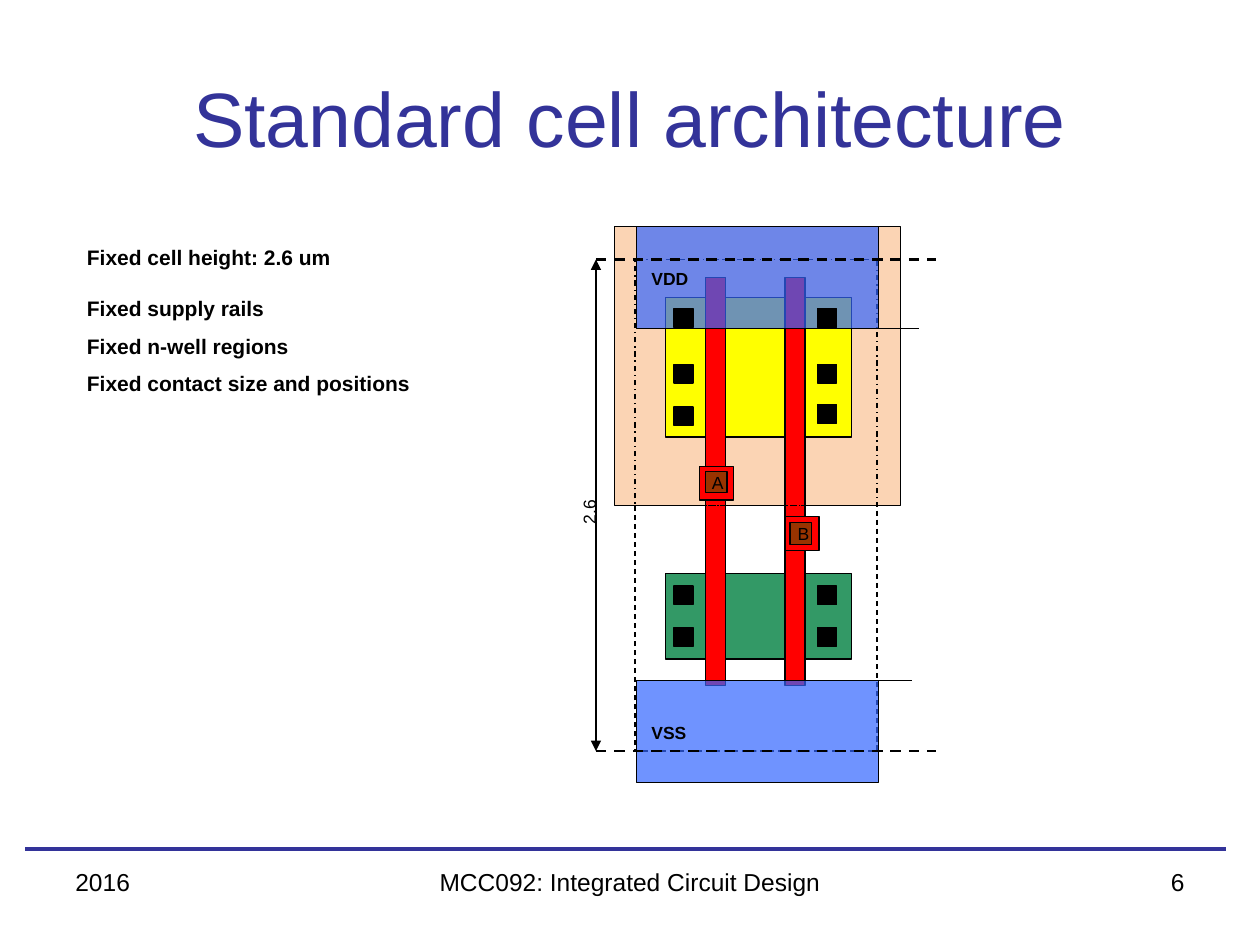
from lxml import etree
from pptx import Presentation
from pptx import util as u
from pptx.dml.color import RGBColor
from pptx.enum import dml, shapes, text
from pptx.oxml.ns import qn

COLORS = {
    "ink": "000000", "accent": "333399", "n_well": "FBD4B4",
    "p_diffusion": "FFFF00", "n_diffusion": "339966", "poly": "FF0000",
    "via": "993300", "metal": "3366FF",
}
FONT = "Arial"
LABEL_INSETS = (0.07, 0.04)
SLIDE_W, SLIDE_H = 10, 7.5

# Cell geometry in inches
CELL_LEFT, CELL_W = 5.04, 1.92
CELL_TOP, CELL_MIDDLE, CELL_BOTTOM = 2.06, 4.01, 5.96
RAIL_H, VDD_TOP, VSS_TOP = 0.81, 1.8, 5.4
DIM_LEFT, DIM_RIGHT = 4.73, 7.43
DIFFUSION_LEFT, DIFFUSION_W = 5.28, 1.48
CONTACT_COLUMNS = (5.35, 6.49)
CONTACT, PAD, VIA = 0.15, 0.27, 0.17


def rgb(name):
    return RGBColor.from_string(COLORS[name])


def add_box(slide, left, top, width, height, fill=None, dash=None, opacity=None):
    box = slide.shapes.add_shape(
        shapes.MSO_SHAPE.RECTANGLE, *map(u.Inches, (left, top, width, height)))
    box.shadow.inherit = False
    box.line.color.rgb = rgb("ink")
    box.line.width = u.Pt(0.75)
    if dash:
        box.line.dash_style = dash
    if fill:
        box.fill.solid()
        box.fill.fore_color.rgb = rgb(fill)
    else:
        box.fill.background()
    if opacity:
        color = box.fill._xPr.find(qn("a:solidFill"))[0]
        etree.SubElement(color, qn("a:alpha"), val=str(opacity * 1000))


def add_line(slide, start, end, color="ink", width=0.75, dash=None, arrows=False):
    line = slide.shapes.add_connector(
        shapes.MSO_CONNECTOR.STRAIGHT, *map(u.Inches, (*start, *end)))
    line.line.color.rgb = rgb(color)
    line.line.width = u.Pt(width)
    if dash:
        line.line.dash_style = dash
    if arrows:
        outline = line.line._get_or_add_ln()
        for end_tag in ("a:headEnd", "a:tailEnd"):
            etree.SubElement(outline, qn(end_tag), type="triangle")
    etree.SubElement(line._element.spPr, qn("a:effectLst"))


def add_text(slide, area, lines, size, bold=False, align=text.PP_ALIGN.LEFT,
             insets=(0.1, 0.05), gaps=(), wrap=True, vertical=False):
    frame = slide.shapes.add_textbox(*map(u.Inches, area)).text_frame
    frame.word_wrap = wrap
    frame.margin_left = frame.margin_right = u.Inches(insets[0])
    frame.margin_top = frame.margin_bottom = u.Inches(insets[1])
    if vertical:
        frame._txBody.bodyPr.set("vert", "vert270")
    frame.text = "\n".join(lines)
    for paragraph in frame.paragraphs:
        paragraph.alignment = align
        paragraph.font.name = FONT
        paragraph.font.size = u.Pt(size)
        paragraph.font.bold = bold
        paragraph.font.color.rgb = rgb("ink")
    for paragraph, gap in zip(frame.paragraphs, gaps):
        paragraph.space_after = u.Pt(gap)


def add_label(slide, area, words, **options):
    add_text(slide, area, [words], 10, insets=LABEL_INSETS, wrap=False, **options)


def add_pin(slide, name, left, top, via_offset):
    """Input pin: poly pad, via on top of it, and the pin name."""
    dx, dy = via_offset
    add_box(slide, left, top, PAD, PAD, "poly")
    add_box(slide, left + dx, top + dy, VIA, VIA, "via")
    add_label(slide, (left + 0.03, top + 0.01, 0.25, 0.24), name)


def add_title(slide, words):
    title = slide.shapes.title
    title.left, title.top, title.width, title.height = map(
        u.Inches, (0.5, 0.3, 9, 1.25))
    title.text_frame.text = words
    title.text_frame.vertical_anchor = text.MSO_ANCHOR.MIDDLE
    heading = title.text_frame.paragraphs[0]
    heading.alignment = text.PP_ALIGN.CENTER
    heading.font.name = FONT
    heading.font.size = u.Pt(44)
    heading.font.color.rgb = rgb("accent")


def add_footer(slide):
    add_line(slide, (0.2, 6.74), (9.73, 6.74), "accent", 2.25)
    for left, width, words, align in (
            (0.5, 2.33, "2016", text.PP_ALIGN.LEFT),
            (3.19, 3.62, "MCC092: Integrated Circuit Design", text.PP_ALIGN.CENTER),
            (7.17, 2.33, "6", text.PP_ALIGN.RIGHT)):
        add_text(slide, (left, 6.83, width, 0.52), [words], 14, align=align)


def add_cell_layers(slide):
    # N-well, diffusion areas and poly gates
    add_box(slide, 4.88, VDD_TOP, 2.27, 2.21, "n_well")
    add_box(slide, DIFFUSION_LEFT, 2.36, DIFFUSION_W, 1.11, "p_diffusion")
    add_box(slide, DIFFUSION_LEFT, 4.55, DIFFUSION_W, 0.68, "n_diffusion")
    for gate_left in (5.6, 6.23):
        add_box(slide, gate_left, 2.2, 0.16, 3.24, "poly")

    # Cell outline: upper and lower half
    add_box(slide, CELL_LEFT, CELL_MIDDLE, CELL_W, CELL_BOTTOM - CELL_MIDDLE,
            dash=dml.MSO_LINE.DASH)
    add_box(slide, CELL_LEFT, CELL_TOP, CELL_W, CELL_MIDDLE - CELL_TOP,
            dash=dml.MSO_LINE.DASH_DOT)

    # Supply rails with names and edge marks
    for name, top, label_top, mark_left, mark_y in (
            ("VDD", VDD_TOP, 2.09, 6.94, VDD_TOP + RAIL_H),
            ("VSS", VSS_TOP, 5.69, 6.89, VSS_TOP)):
        add_box(slide, CELL_LEFT + 0.01, top, CELL_W, RAIL_H, "metal", opacity=70)
        add_label(slide, (5.1, label_top, 0.61, 0.25), name, bold=True)
        add_line(slide, (mark_left, mark_y), (mark_left + 0.35, mark_y))

    # Contacts: the lowest p-side pair is slightly staggered
    for row in ((2.45, 2.45), (2.89, 2.89), (3.23, 3.21), (4.65, 4.65), (4.98, 4.98)):
        for left, top in zip(CONTACT_COLUMNS, row):
            add_box(slide, left, top, CONTACT, CONTACT, "ink")

    # Input pins
    add_pin(slide, "A", 5.55, 3.7, (0.05, 0.04))
    add_pin(slide, "B", 6.23, 4.1, (0.04, 0.05))


def add_height_dimension(slide):
    for y in (CELL_TOP, CELL_BOTTOM):
        add_line(slide, (DIM_LEFT, y), (DIM_RIGHT, y), width=1.5,
                 dash=dml.MSO_LINE.DASH)
    add_line(slide, (DIM_LEFT, CELL_TOP), (DIM_LEFT, CELL_BOTTOM), arrows=True)
    add_label(slide, (4.52, 3.93, 0.39, 0.27), "2.6", vertical=True)


def main():
    deck = Presentation()
    deck.slide_width, deck.slide_height = u.Inches(SLIDE_W), u.Inches(SLIDE_H)
    slide = deck.slides.add_slide(deck.slide_layouts[5])
    add_title(slide, "Standard cell architecture")
    add_text(slide, (0.68, 1.9, 3.18, 1.89),
             ["Fixed cell height: 2.6 um", "Fixed supply rails",
              "Fixed n-well regions", "Fixed contact size and positions"],
             12, bold=True, insets=(0.01, 0.04), gaps=(15, 7, 7, 7))
    add_cell_layers(slide)
    add_height_dimension(slide)
    add_footer(slide)
    deck.save("out.pptx")


if __name__ == "__main__":
    main()
